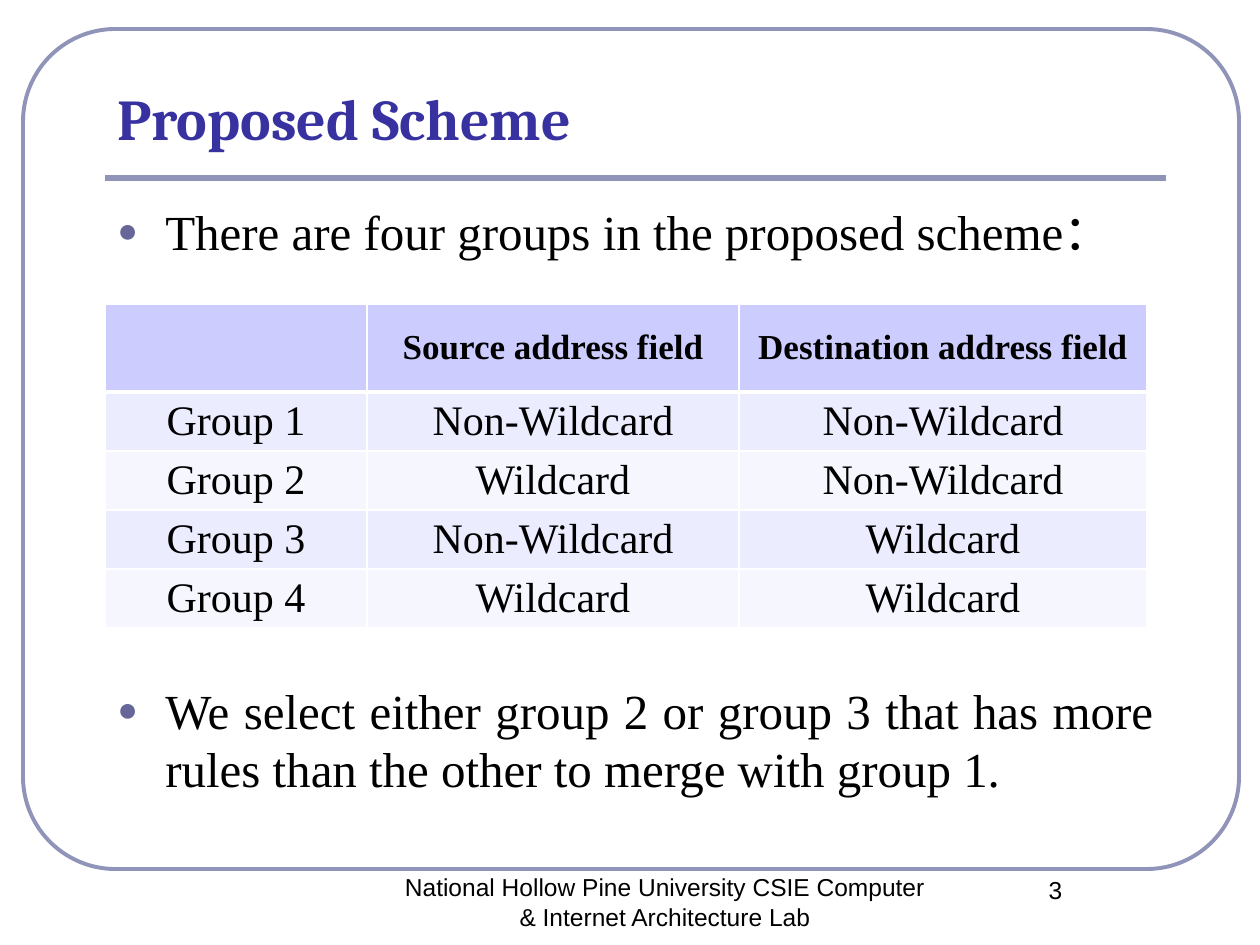
"""Builds the slide that lists the four groups of the proposed scheme."""
from lxml import etree
from pptx import Presentation
from pptx import util as u
from pptx.dml.color import RGBColor
from pptx.enum import shapes, text
from pptx.oxml import ns

COLOURS = {
    "frame": "9094B8", "title": "3732A0", "ink": "000000", "bullet": "666699",
    "header": "CCCCFF", "odd": "ECECFF", "even": "F6F6FF", "border": "FFFFFF",
}
SERIF = "Times New Roman"
CENTER = text.PP_ALIGN.CENTER
MIDDLE = text.MSO_ANCHOR.MIDDLE


def px(length):
    return u.Emu(round(length * 914400 / 126))


def colour(name):
    return RGBColor.from_string(COLOURS[name])


def add_child(parent, tag, **attributes):
    return etree.SubElement(parent, ns.qn(tag), attributes)


class SlideBuilder:
    def __init__(self, slide):
        self.slide = slide

    def style_line(self, line, width):
        line.color.rgb = colour("frame")
        line.width = u.Pt(width)

    def frame(self, left, top, width, height):
        shape = self.slide.shapes.add_shape(
            shapes.MSO_SHAPE.ROUNDED_RECTANGLE, px(left), px(top), px(width), px(height))
        shape.adjustments[0] = 0.11
        shape.shadow.inherit = False
        shape.fill.background()
        self.style_line(shape.line, 2.25)

    def rule(self, left, right, y):
        connector = self.slide.shapes.add_connector(
            shapes.MSO_CONNECTOR.STRAIGHT, px(left), px(y), px(right), px(y))
        self.style_line(connector.line, 3)
        add_child(connector._element.spPr, "a:effectLst")

    def run(self, paragraph, words, size, font=SERIF, ink="ink", bold=False):
        run = paragraph.add_run()
        run.text = words
        run.font.size = u.Pt(size)
        run.font.name = font
        run.font.bold = bold
        run.font.color.rgb = colour(ink)

    def text_frame(self, left, top, width, height, anchor=text.MSO_ANCHOR.TOP):
        shape = self.slide.shapes.add_textbox(px(left), px(top), px(width), px(height))
        shape.text_frame.word_wrap = True
        shape.text_frame.vertical_anchor = anchor
        return shape.text_frame

    def title(self, words, *box):
        frame = self.text_frame(*box, anchor=text.MSO_ANCHOR.BOTTOM)
        self.run(frame.paragraphs[0], words, 33, "Cambria", "title", True)

    def footer(self, words, *box):
        paragraph = self.text_frame(*box).paragraphs[0]
        paragraph.alignment = CENTER
        self.run(paragraph, words, 14, "Arial")

    def bullets(self, items, gap, *box):
        frame = self.text_frame(*box)
        for index, words in enumerate(items):
            paragraph = frame.add_paragraph() if index else frame.paragraphs[0]
            paragraph.alignment = text.PP_ALIGN.JUSTIFY
            paragraph.space_before = u.Pt(gap if index else 6)
            properties = paragraph._p.get_or_add_pPr()
            properties.set("marL", str(px(48)))
            properties.set("indent", str(-px(48)))
            bullet_colour = add_child(properties, "a:buClr")
            add_child(bullet_colour, "a:srgbClr", val=COLOURS["bullet"])
            add_child(properties, "a:buSzPct", val="70000")
            add_child(properties, "a:buFont", typeface="Arial")
            add_child(properties, "a:buChar", char="●")
            self.run(paragraph, words, 28)

    def borders(self, cell, top, bottom):
        properties = cell._tc.get_or_add_tcPr()
        widths = {"a:lnL": 1, "a:lnR": 1, "a:lnT": top, "a:lnB": bottom}
        for index, (tag, width) in enumerate(widths.items()):
            line = etree.Element(ns.qn(tag), w=str(u.Pt(width)))
            fill = add_child(line, "a:solidFill")
            add_child(fill, "a:srgbClr", val=COLOURS["border"])
            properties.insert(index, line)

    def cell(self, cell, words, row):
        cell.fill.solid()
        cell.fill.fore_color.rgb = colour("header" if row == 0 else "odd" if row % 2 else "even")
        cell.vertical_anchor = MIDDLE
        cell.margin_left = cell.margin_right = px(9)
        cell.margin_top = cell.margin_bottom = 0
        self.borders(cell, 3 if row == 1 else 1, 3 if row == 0 else 1)
        if words:
            paragraph = cell.text_frame.paragraphs[0]
            paragraph.alignment = CENTER
            self.run(paragraph, words, 24 if row else 20, bold=row == 0)

    def table(self, rows, left, top, widths, heights):
        table = self.slide.shapes.add_table(
            len(rows), len(widths), px(left), px(top), px(sum(widths)), px(sum(heights))).table
        for column, width in zip(table.columns, widths):
            column.width = px(width)
        for index, (words, height) in enumerate(zip(rows, heights)):
            table.rows[index].height = px(height)
            for column, word in enumerate(words):
                self.cell(table.cell(index, column), word, index)


def main():
    presentation = Presentation()
    presentation.slide_width, presentation.slide_height = px(1260), px(945)
    builder = SlideBuilder(presentation.slides.add_slide(presentation.slide_layouts[6]))
    builder.frame(23, 29, 1216, 840)
    builder.rule(105, 1166, 178)
    builder.title("Proposed Scheme", 105, 76, 1061, 82)
    builder.footer("National Hollow Pine University CSIE Computer & Internet Architecture Lab",
                   392, 866, 546, 63)
    builder.footer("3", 945, 869, 221, 63)
    builder.bullets([
        "There are four groups in the proposed scheme：",
        "We select either group 2 or group 3 that has more rules than the other "
        "to merge with group 1.",
    ], 240, 105, 195, 1061, 624)
    builder.table([
        ("", "Source address field", "Destination address field"),
        ("Group 1", "Non-Wildcard", "Non-Wildcard"),
        ("Group 2", "Wildcard", "Non-Wildcard"),
        ("Group 3", "Non-Wildcard", "Wildcard"),
        ("Group 4", "Wildcard", "Wildcard"),
    ], 105, 304, (262, 372, 408), (88, 59, 59, 59, 59))
    presentation.save("out.pptx")


if __name__ == "__main__":
    main()
